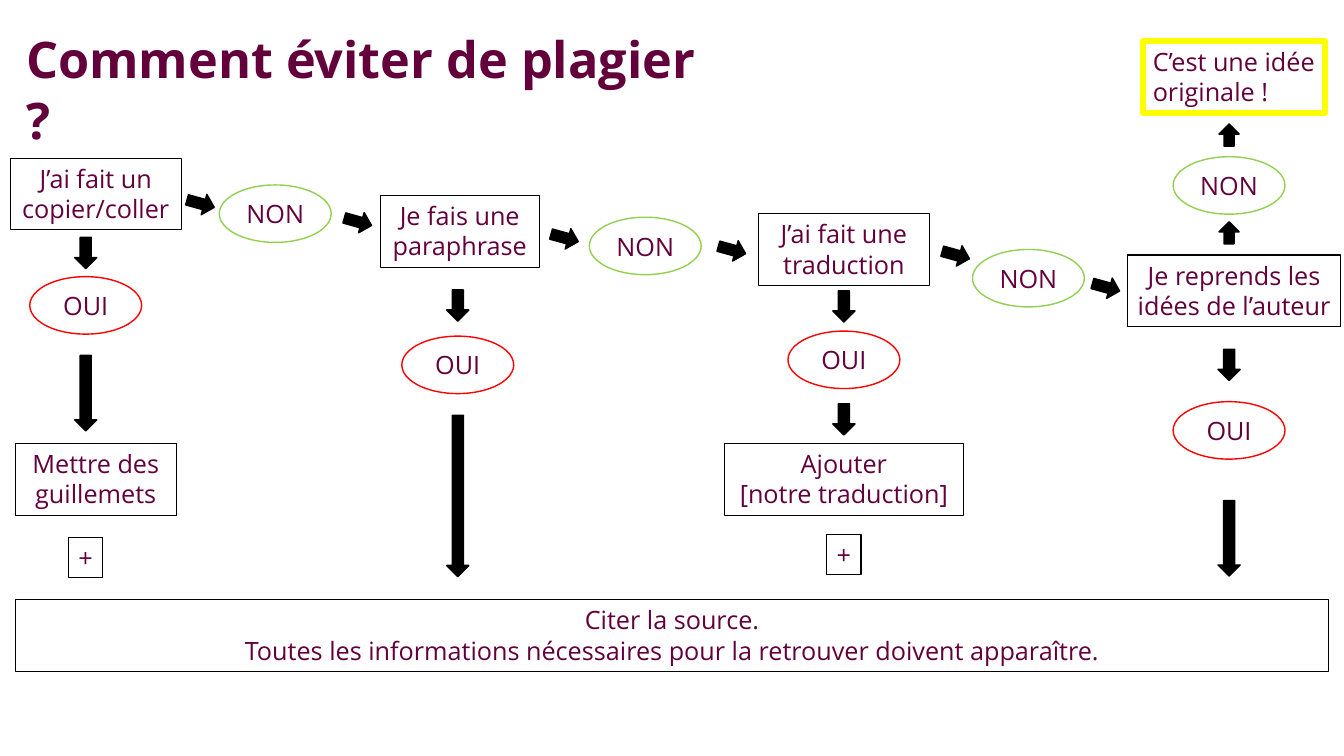
from pptx import Presentation
from pptx import util as u
from pptx.dml.color import RGBColor
from pptx.enum import shapes, text

WIDTH, HEIGHT = 13.33, 7.5
FONT = "Open Sans"
PLUM, BLACK, WHITE = "63003C", "000000", "FFFFFF"
GREEN, RED, YELLOW = "92D050", "FF0000", "FFFF00"
COLUMNS = (0.85, 4.54, 8.37, 12.19)  # centres of the four questions' branches
BOX_HEIGHT = 0.71
PLUS_SIZE = (0.34, 0.4)
CENTER, LEFT = text.PP_ALIGN.CENTER, text.PP_ALIGN.LEFT


def color(value):
    return RGBColor.from_string(value)


def write(frame, lines, size=18, bold=False, align=CENTER):
    frame.text = "\n".join(lines)
    for para in frame.paragraphs:
        para.alignment = align
        for span in para.runs:
            span.font.name = FONT
            span.font.size = u.Pt(size)
            span.font.bold = bold
            span.font.color.rgb = color(PLUM)


def add_centered(slide, kind, x, y, width, height, fill, line, weight):
    """Add a preset shape whose centre is at x, y."""
    shape = slide.shapes.add_shape(
        kind, u.Inches(x - width / 2), u.Inches(y - height / 2),
        u.Inches(width), u.Inches(height))
    shape.shadow.inherit = False
    shape.fill.solid()
    shape.fill.fore_color.rgb = color(fill)
    shape.line.color.rgb = color(line)
    shape.line.width = u.Pt(weight)
    return shape


def add_box(slide, x, top, width, *lines, height=BOX_HEIGHT, line=BLACK,
            weight=0.75, align=CENTER, wrap=True):
    box = add_centered(slide, shapes.MSO_SHAPE.RECTANGLE, x, top + height / 2,
                       width, height, WHITE, line, weight)
    box.text_frame.word_wrap = wrap
    box.text_frame.vertical_anchor = text.MSO_ANCHOR.TOP
    write(box.text_frame, lines, align=align)


def add_plus(slide, x, top):
    width, height = PLUS_SIZE
    add_box(slide, x, top, width, "+", height=height, wrap=False)


def add_answer(slide, x, y, label):
    line = GREEN if label == "NON" else RED
    oval = add_centered(slide, shapes.MSO_SHAPE.OVAL, x, y, 1.11, 0.57,
                        WHITE, line, 1)
    frame = oval.text_frame
    frame.margin_left = frame.margin_right = 0
    frame.vertical_anchor = text.MSO_ANCHOR.MIDDLE
    write(frame, [label])


def add_arrow(slide, x, y, length, angle, thickness=0.22):
    arrow = add_centered(slide, shapes.MSO_SHAPE.RIGHT_ARROW, x, y, length,
                         thickness, BLACK, BLACK, 1)
    arrow.rotation = angle


def add_title(slide, title):
    box = slide.shapes.add_textbox(u.Inches(0.16), u.Inches(0.23),
                                   u.Inches(6.95), u.Inches(BOX_HEIGHT))
    box.text_frame.word_wrap = True
    write(box.text_frame, [title], size=36, bold=True, align=LEFT)


def add_questions(slide):
    for x, top, width, question in (
            (0.95, 1.57, 1.7, "J’ai fait un copier/coller"),
            (4.56, 1.94, 1.58, "Je fais une paraphrase"),
            (8.37, 2.12, 1.69, "J’ai fait une traduction"),
            (12.24, 2.53, 2.12, "Je reprends les idées de l’auteur")):
        add_box(slide, x, top, width, question)


def add_no_path(slide):
    for step, x in enumerate((2.73, 6.4, 10.2)):
        add_answer(slide, x, 2.12 + 0.32 * step, "NON")
    for x, y in ((1.99, 2.02), (3.55, 2.2), (5.6, 2.36),
                 (7.26, 2.48), (9.48, 2.53), (10.97, 2.85)):
        add_arrow(slide, x, y, 0.28, 15.5, 0.21)
    for y in (2.31, 1.34):
        add_arrow(slide, COLUMNS[3], y, 0.22, 270, 0.2)
    add_answer(slide, COLUMNS[3], 1.84, "NON")
    add_box(slide, 12.24, 0.41, 1.81, "C’est une idée originale !",
            line=YELLOW, weight=4.5, align=LEFT)


def add_yes_paths(slide):
    for x, first_arrow, answer, second_arrow, length in zip(
            COLUMNS, (2.51, 3.03, 3.04, 3.62), (3.03, 3.62, 3.57, 4.27),
            (3.9, 4.92, 4.16, 5.34), (0.75, 1.6, 0.31, 0.75)):
        add_arrow(slide, x, first_arrow, 0.31, 90)
        add_answer(slide, x, answer, "OUI")
        add_arrow(slide, x, second_arrow, length, 90)
    add_box(slide, 0.95, 4.4, 1.6, "Mettre des guillemets")
    add_plus(slide, COLUMNS[0], 5.33)
    add_box(slide, COLUMNS[2], 4.4, 2.37, "Ajouter", "[notre traduction]")
    add_plus(slide, COLUMNS[2], 5.3)
    add_box(slide, WIDTH / 2, 5.95, 13.02, "Citer la source.",
            "Toutes les informations nécessaires pour la retrouver "
            "doivent apparaître.")


def main():
    deck = Presentation()
    deck.slide_width, deck.slide_height = u.Inches(WIDTH), u.Inches(HEIGHT)
    slide = deck.slides.add_slide(deck.slide_layouts[6])
    add_title(slide, "Comment éviter de plagier ?")
    add_questions(slide)
    add_no_path(slide)
    add_yes_paths(slide)
    deck.save("out.pptx")


if __name__ == "__main__":
    main()
